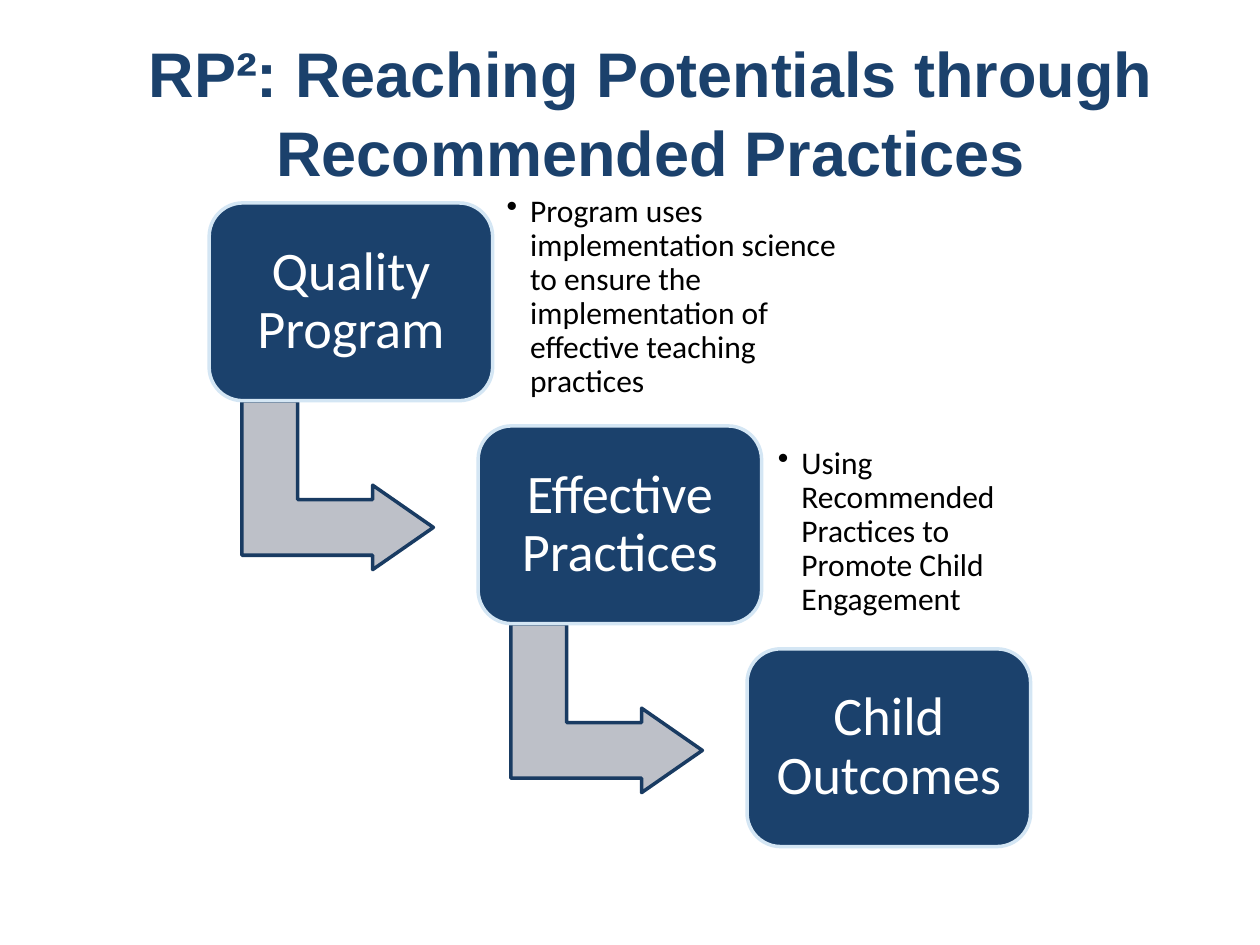
from lxml import etree
from pptx import Presentation
from pptx import util as u
from pptx.dml.color import RGBColor
from pptx.enum import shapes, text
from pptx.oxml import ns

NAVY = RGBColor(0x1B, 0x41, 0x6C)
EDGE = RGBColor(0x19, 0x3B, 0x62)
GRAY = RGBColor(0xBD, 0xC0, 0xC8)
PALE = RGBColor(0xD4, 0xE6, 0xF4)
WHITE = RGBColor(0xFF, 0xFF, 0xFF)
BLACK = RGBColor(0, 0, 0)

STEPS = [
    ("Quality Program",
     "Program uses implementation science to ensure the implementation "
     "of effective teaching practices", (165, 3.5, 199.4, 100.8)),
    ("Effective Practices",
     "Using Recommended Practices to Promote Child Engagement",
     (166.3, 15, 152.6, 91.4)),
    ("Child Outcomes", None, None),
]


class Deck:
    """Draws the steps of a staircase on one slide in a shared style."""

    font = "Calibri"
    head = "Arial"

    def __init__(self, slide):
        self.slide = slide

    def fill_in(self, shape, words, size, color, pad, align, gap=0.9):
        frame = shape.text_frame
        frame.word_wrap = True
        frame.vertical_anchor = text.MSO_ANCHOR.MIDDLE
        frame.margin_left = frame.margin_right = u.Pt(pad)
        frame.margin_top = frame.margin_bottom = u.Pt(pad)
        para = frame.paragraphs[0]
        para.text = words
        para.alignment = align
        para.line_spacing = gap
        para.font.name = self.font
        para.font.size = u.Pt(size)
        para.font.color.rgb = color
        return para

    def label(self, area, *style):
        box = self.slide.shapes.add_textbox(*map(u.Pt, area))
        return box, self.fill_in(box, *style)

    def title(self, words, area):
        box, para = self.label(area, words, 36, NAVY, 6,
                               text.PP_ALIGN.CENTER, 1.04)
        box.text_frame.vertical_anchor = text.MSO_ANCHOR.TOP
        para.font.name = self.head
        para.font.bold = True

    def note(self, words, area):
        box = self.slide.shapes.add_textbox(*map(u.Pt, area))
        props = box.text_frame.paragraphs[0]._p.get_or_add_pPr()
        props.set("marL", str(u.Pt(13.5)))
        props.set("indent", str(-u.Pt(13.5)))
        etree.SubElement(props, ns.qn("a:buChar")).set("char", "•")
        self.fill_in(box, words, 18, BLACK, 5, text.PP_ALIGN.LEFT)

    def shape(self, kind, area, fill, line, adjust):
        item = self.slide.shapes.add_shape(kind, *map(u.Pt, area))
        item.shadow.inherit = False
        item.fill.solid()
        item.fill.fore_color.rgb = fill
        item.line.color.rgb = line
        item.line.width = u.Pt(2)
        for i, value in enumerate(adjust):
            item.adjustments[i] = value
        return item

    def arrow(self, area):
        bend = self.shape(shapes.MSO_SHAPE.BENT_UP_ARROW, area, GRAY, EDGE,
                          (0.33, 0.25, 0.36))
        bend.rotation = 90

    def card(self, words, area):
        box = self.shape(shapes.MSO_SHAPE.ROUNDED_RECTANGLE, area, NAVY,
                         PALE, (0.17,))
        self.fill_in(box, words, 31, WHITE, 9.36, text.PP_ALIGN.CENTER)


def main():
    show = Presentation()
    show.slide_width, show.slide_height = u.Pt(720), u.Pt(540)
    deck = Deck(show.slides.add_slide(show.slide_layouts[6]))
    deck.title("RP²: Reaching Potentials through Recommended Practices",
               (36, 12.2, 671.8, 54))
    for i, (name, note, area) in enumerate(STEPS):
        left, top = 119.5 + 153.7 * i, 116 + 127.4 * i
        if note:
            deck.arrow((left + 25.2, top + 106.6, 96.5, 109.4))
        deck.card(name, (left, top, 162, 113))
        if note:
            x, y, wide, high = area
            deck.note(note, (left + x, top + y, wide, high))
    show.save("out.pptx")


if __name__ == "__main__":
    main()
